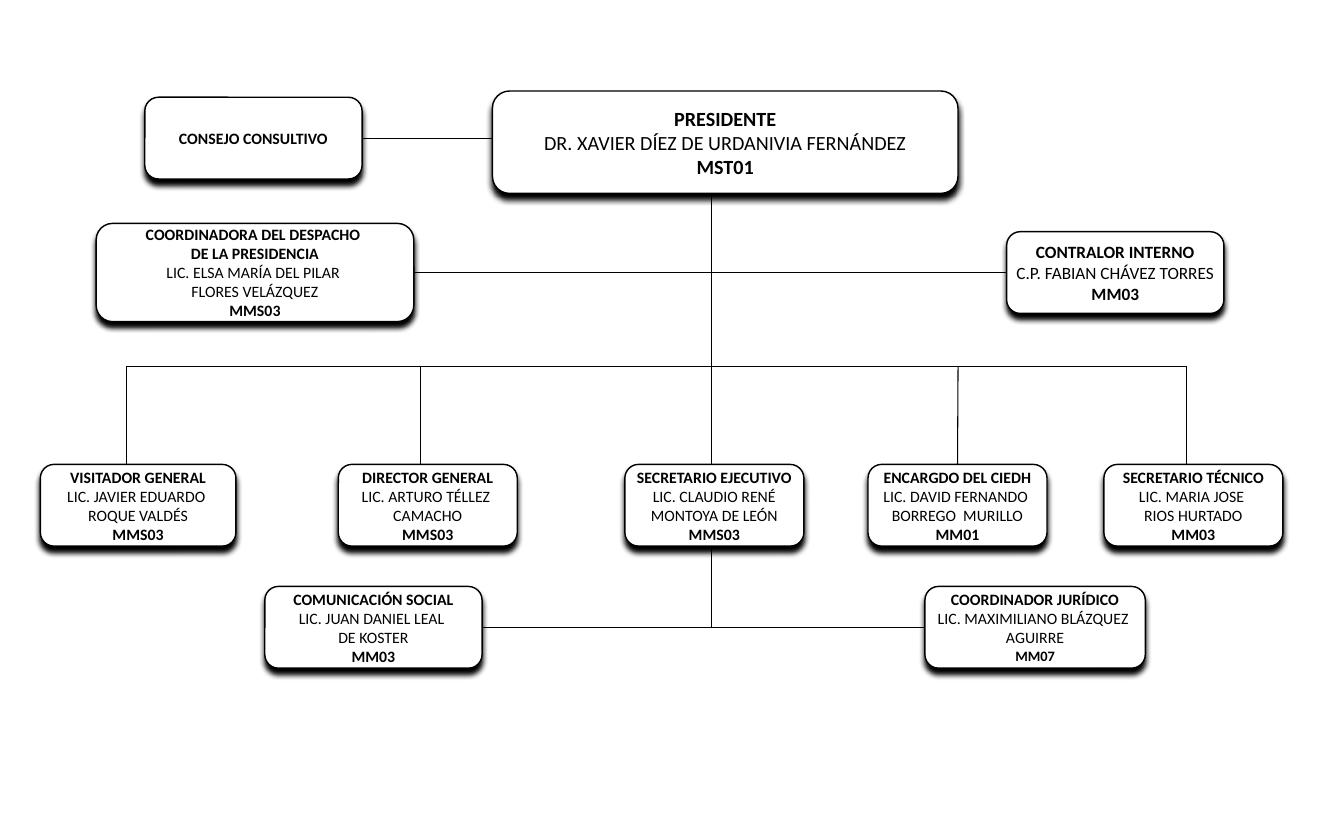
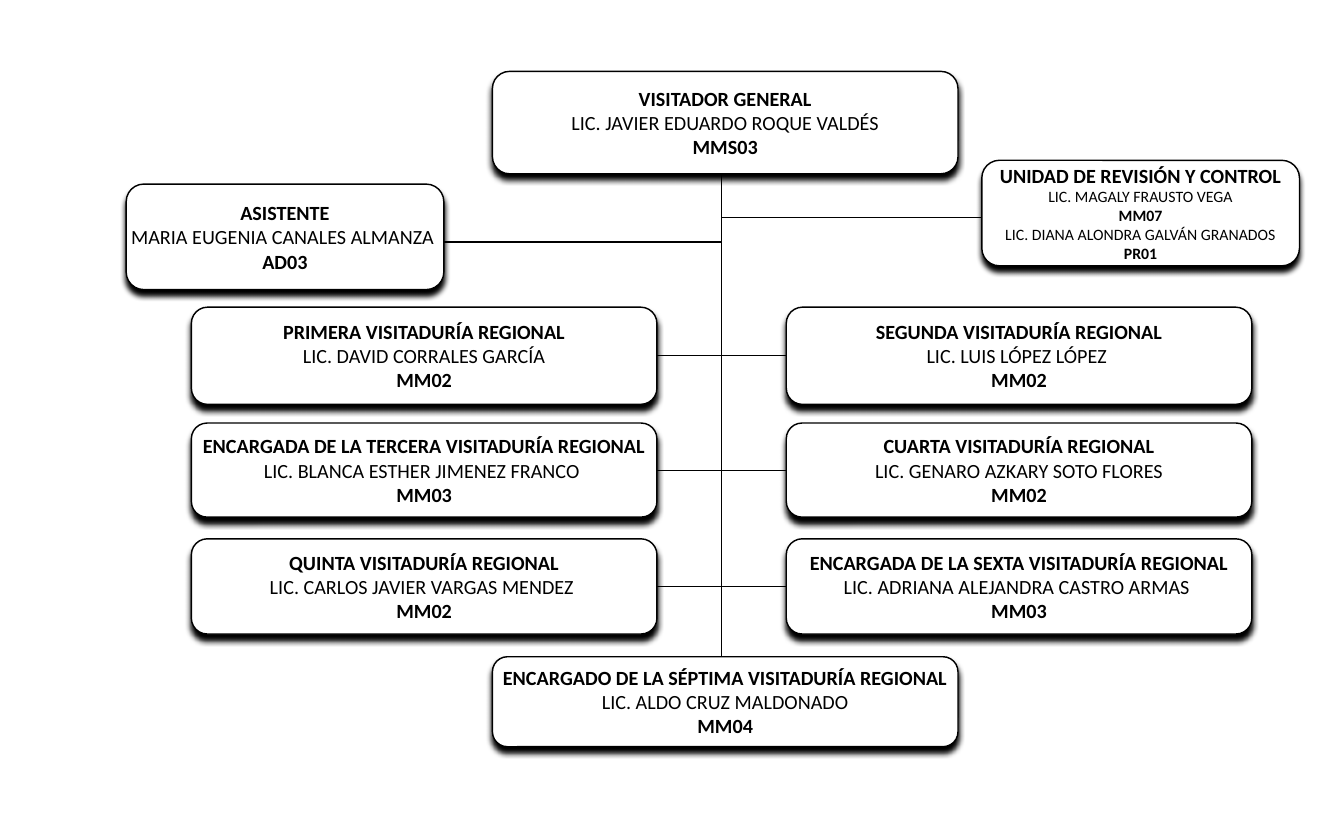
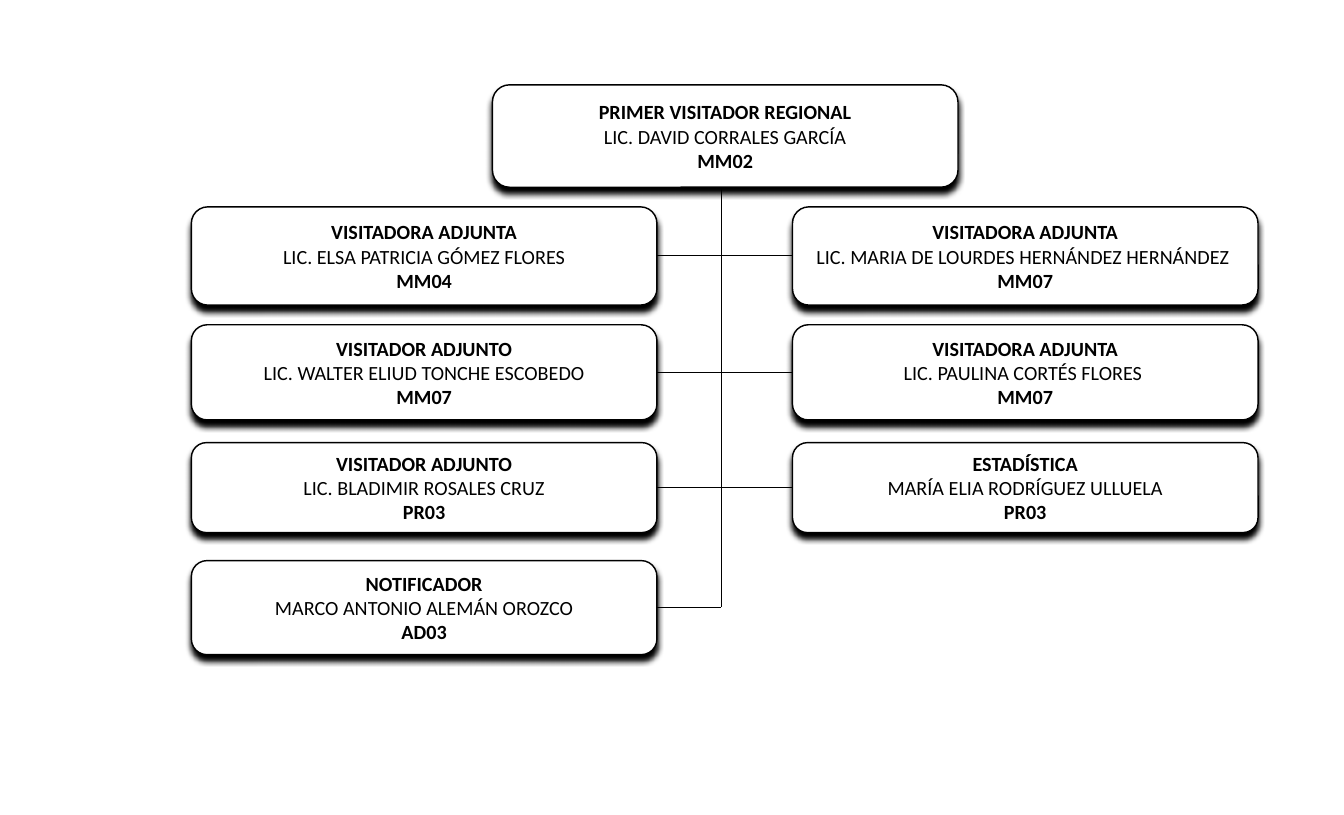
import pptx
import pptx.dml.color
import pptx.enum.shapes
import pptx.enum.text
import pptx.util
from lxml import etree
from pptx.oxml.ns import qn

Inches, Pt = pptx.util.Inches, pptx.util.Pt
BLACK, WHITE = "000000", "FFFFFF"
TOP, LEFT, BOTTOM, RIGHT = range(4)
FRAME_FORMAT = {
    "margin_left": Inches(0.17), "margin_right": Inches(0.17),
    "margin_top": Inches(0.09), "margin_bottom": Inches(0.09),
    "vertical_anchor": pptx.enum.text.MSO_ANCHOR.MIDDLE, "word_wrap": False,
}
SHADOW = {"blurRad": Pt(4), "dist": Pt(4), "dir": 90 * 60000, "algn": "ctr", "rotWithShape": 0}
CARD_WIDTH, HEAD_HEIGHT = 4.5, 0.99
HEAD_X, TRUNK_X = 2.91, 5.12


def color(code):
    return pptx.dml.color.RGBColor.from_string(code)


def set_all(target, values):
    for name, value in values.items():
        setattr(target, name, value)


def add_line(slide, start, end, begin=None, finish=None):
    """Draw a line; begin and finish are (shape, side) pairs to join."""
    line = slide.shapes.add_connector(
        pptx.enum.shapes.MSO_CONNECTOR.STRAIGHT, *map(Inches, (*start, *end)))
    line.line.color.rgb = color(BLACK)
    line.line.width = Pt(0.75)
    etree.SubElement(line._element.spPr, qn("a:effectLst"))
    if begin:
        line.begin_connect(*begin)
    if finish:
        line.end_connect(*finish)


def side_point(card, side):
    """Middle of the left or right side, in inches."""
    x = card.left + (card.width if side == RIGHT else 0)
    return pptx.util.Emu(x).inches, pptx.util.Emu(card.top + card.height // 2).inches


def join_sides(slide, left_card, right_card):
    add_line(slide, side_point(left_card, RIGHT), side_point(right_card, LEFT),
             (left_card, RIGHT), (right_card, LEFT))


def join_level(slide, card, x):
    """Run a line from the right side of a card straight to x."""
    start = side_point(card, RIGHT)
    add_line(slide, start, (x, start[1]), (card, RIGHT))


def add_card(slide, box, lines, size=14, sizes=None):
    """Add a shadowed card; lines starting with * are bold, sizes overrides by line."""
    card = slide.shapes.add_shape(
        pptx.enum.shapes.MSO_SHAPE.ROUNDED_RECTANGLE, *map(Inches, box))
    card.fill.solid()
    card.fill.fore_color.rgb = color(WHITE)
    card.line.color.rgb = color(BLACK)
    card.line.width = Pt(1)
    card.shadow.inherit = False
    effects = card._element.spPr.find(qn("a:effectLst"))
    shadow = etree.SubElement(effects, qn("a:outerShdw"),
                              {name: str(value) for name, value in SHADOW.items()})
    etree.SubElement(shadow, qn("a:srgbClr"), val=BLACK)

    frame = card.text_frame
    set_all(frame, FRAME_FORMAT)
    for index, line in enumerate(lines):
        para = frame.paragraphs[0] if index == 0 else frame.add_paragraph()
        para.alignment = pptx.enum.text.PP_ALIGN.CENTER
        span = para.add_run()
        span.text = line.removeprefix("*")
        set_all(span.font, {"name": "Calibri", "bold": line.startswith("*"),
                            "size": Pt((sizes or {}).get(index, size))})
        span.font.color.rgb = color(BLACK)
    return card


def add_presidency_chart(slide, left, top):
    trunk_x, bus_y, drop_y = left + 6.49, top + 2.66, top + 3.61

    def card(x, y, width, height, lines, size=11, **extra):
        return add_card(slide, (left + x, top + y, width, height), lines, size, **extra)

    add_line(slide, (trunk_x, top + HEAD_HEIGHT), (trunk_x, top + 5.18))
    add_line(slide, (left + 0.83, bus_y), (left + 11.08, bus_y))
    for x in (0.83, 3.67, 11.08):
        add_line(slide, (left + x, bus_y), (left + x, drop_y))

    card(4.37, 0, CARD_WIDTH, HEAD_HEIGHT,
         ["*PRESIDENTE", "DR. XAVIER DÍEZ DE URDANIVIA FERNÁNDEZ", "*MST01"], 14)
    council = card(1.01, 0.06, 2.1, 0.79, ["*CONSEJO CONSULTIVO"])
    office = card(0.54, 1.28, 3.07, 0.95, [
        "*COORDINADORA DEL DESPACHO ", "*DE LA PRESIDENCIA",
        "LIC. ELSA MARÍA DEL PILAR ", "FLORES VELÁZQUEZ", "*MMS03"])
    auditor = card(9.34, 1.36, 2.1, 0.79,
                   ["*CONTRALOR INTERNO", "C.P. FABIAN CHÁVEZ TORRES", "*MM03"], 12)
    directors = [
        (0, 1.89, ["*VISITADOR GENERAL", "LIC. JAVIER EDUARDO ", "ROQUE VALDÉS", "*MMS03"]),
        (2.88, 1.73, ["*DIRECTOR GENERAL", "LIC. ARTURO TÉLLEZ ", "CAMACHO", "*MMS03"]),
        (5.65, 1.73, ["*SECRETARIO EJECUTIVO", "LIC. CLAUDIO RENÉ", "MONTOYA DE LEÓN", "*MMS03"]),
        (8, 1.73, ["*ENCARGDO DEL CIEDH", "LIC. DAVID FERNANDO ", "BORREGO  MURILLO", "*MM01"]),
        (10.28, 1.73, ["*SECRETARIO TÉCNICO", "LIC. MARIA JOSE ", "RIOS HURTADO", "*MM03"]),
    ]
    cards = [card(x, 3.61, width, 0.79, lines) for x, width, lines in directors]
    press = card(2.17, 4.79, 2.1, 0.79,
                 ["*COMUNICACIÓN SOCIAL", "LIC. JUAN DANIEL LEAL ", "DE KOSTER", "*MM03"])
    legal = card(8.55, 4.79, 2.13, 0.79,
                 ["*COORDINADOR JURÍDICO", "LIC. MAXIMILIANO BLÁZQUEZ ", "AGUIRRE", "*MM07"],
                 sizes={3: 10})

    join_level(slide, council, left + 4.37)
    join_sides(slide, office, auditor)
    join_sides(slide, press, legal)
    research_x = left + 8.87
    add_line(slide, (research_x, bus_y), (research_x, drop_y), finish=(cards[3], TOP))


def add_regional_chart(slide, box, head, first_row, pitch, rows):
    """Draw a head card, a trunk to the foot of the box, and rows of (height, *cards)."""
    left, top, width, height = box
    trunk_x = left + TRUNK_X
    add_line(slide, (trunk_x, top + HEAD_HEIGHT), (trunk_x, top + height))
    add_card(slide, (left + HEAD_X, top, CARD_WIDTH, HEAD_HEIGHT), head)
    columns = (left, left + width - CARD_WIDTH)
    for index, (row_height, *people) in enumerate(rows):
        y = top + first_row + index * pitch
        cards = [add_card(slide, (x, y, CARD_WIDTH, row_height), lines)
                 for x, lines in zip(columns, people)]
        if len(cards) == 2:
            join_sides(slide, *cards)
        else:
            join_level(slide, cards[0], trunk_x)


def add_support_cards(slide, left, top):
    """Add the assistant, the review unit and the seventh office around the trunk."""
    trunk_x = left + TRUNK_X
    for start, end, y in ((left + 2.44, trunk_x, 1.65), (trunk_x, left + 7.64, 1.41)):
        add_line(slide, (start, top + y), (end, top + y))
    add_card(slide, (left - 0.63, top + 1.09, 3.07, 1.02),
             ["*ASISTENTE", "MARIA EUGENIA CANALES ALMANZA ", "*AD03"])
    add_card(slide, (left + 7.64, top + 0.86, 3.07, 1.02),
             ["*UNIDAD DE REVISIÓN Y CONTROL", "LIC. MAGALY FRAUSTO VEGA", "*MM07",
              "LIC. DIANA ALONDRA GALVÁN GRANADOS", "*PR01"], 11, {0: 14})
    add_card(slide, (left + HEAD_X, top + 5.66, CARD_WIDTH, 0.87),
             ["*ENCARGADO DE LA SÉPTIMA VISITADURÍA REGIONAL",
              "LIC. ALDO CRUZ MALDONADO", "*MM04"])


def main():
    deck = pptx.Presentation()
    deck.slide_width, deck.slide_height = Inches(12.99), Inches(7.88)
    presidency, general, regional = [
        deck.slides.add_slide(deck.slide_layouts[6]) for _ in range(3)]

    add_presidency_chart(presidency, 0.39, 0.88)

    add_regional_chart(
        general, (1.85, 0.69, 10.25, 5.66),
        ["*VISITADOR GENERAL", "LIC. JAVIER EDUARDO ROQUE VALDÉS", "*MMS03"], 2.28, 1.12, [
            (0.94,
             ["*PRIMERA VISITADURÍA REGIONAL", "LIC. DAVID CORRALES GARCÍA", "*MM02"],
             ["*SEGUNDA VISITADURÍA REGIONAL", "LIC. LUIS LÓPEZ LÓPEZ ", "*MM02"]),
            (0.91,
             ["*ENCARGADA DE LA TERCERA VISITADURÍA REGIONAL",
              "LIC. BLANCA ESTHER JIMENEZ FRANCO ", "*MM03"],
             ["*CUARTA VISITADURÍA REGIONAL", "LIC. GENARO AZKARY SOTO FLORES", "*MM02"]),
            (0.92,
             ["*QUINTA VISITADURÍA REGIONAL", "LIC. CARLOS JAVIER VARGAS MENDEZ ", "*MM02"],
             ["*ENCARGADA DE LA SEXTA VISITADURÍA REGIONAL",
              "LIC. ADRIANA ALEJANDRA CASTRO ARMAS ", "*MM03"]),
        ])
    add_support_cards(general, 1.85, 0.69)

    add_regional_chart(
        regional, (1.85, 0.82, 10.31, 5.05),
        ["*PRIMER VISITADOR REGIONAL", "LIC. DAVID CORRALES GARCÍA", "*MM02"], 1.18, 1.14, [
            (0.95,
             ["*VISITADORA ADJUNTA", "LIC. ELSA PATRICIA GÓMEZ FLORES", "*MM04"],
             ["*VISITADORA ADJUNTA", "LIC. MARIA DE LOURDES HERNÁNDEZ HERNÁNDEZ ", "*MM07"]),
            (0.92,
             ["*VISITADOR ADJUNTO", "LIC. WALTER ELIUD TONCHE ESCOBEDO", "*MM07"],
             ["*VISITADORA ADJUNTA", "LIC. PAULINA CORTÉS FLORES ", "*MM07"]),
            (0.87,
             ["*VISITADOR ADJUNTO", "LIC. BLADIMIR ROSALES CRUZ", "*PR03"],
             ["*ESTADÍSTICA", "MARÍA ELIA RODRÍGUEZ ULLUELA", "*PR03"]),
            (0.91, ["*NOTIFICADOR", "MARCO ANTONIO ALEMÁN OROZCO", "*AD03"]),
        ])

    deck.save("out.pptx")


if __name__ == "__main__":
    main()
